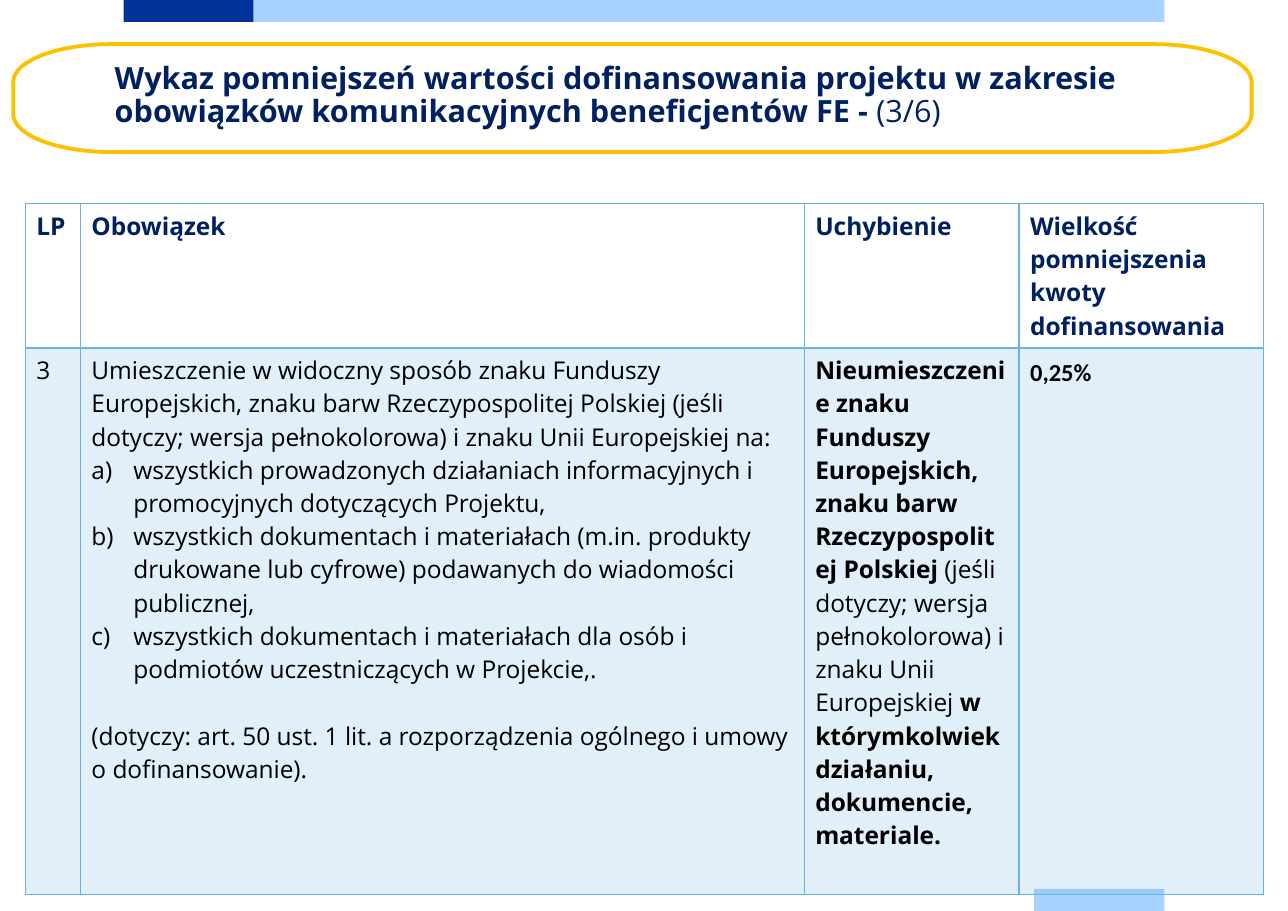
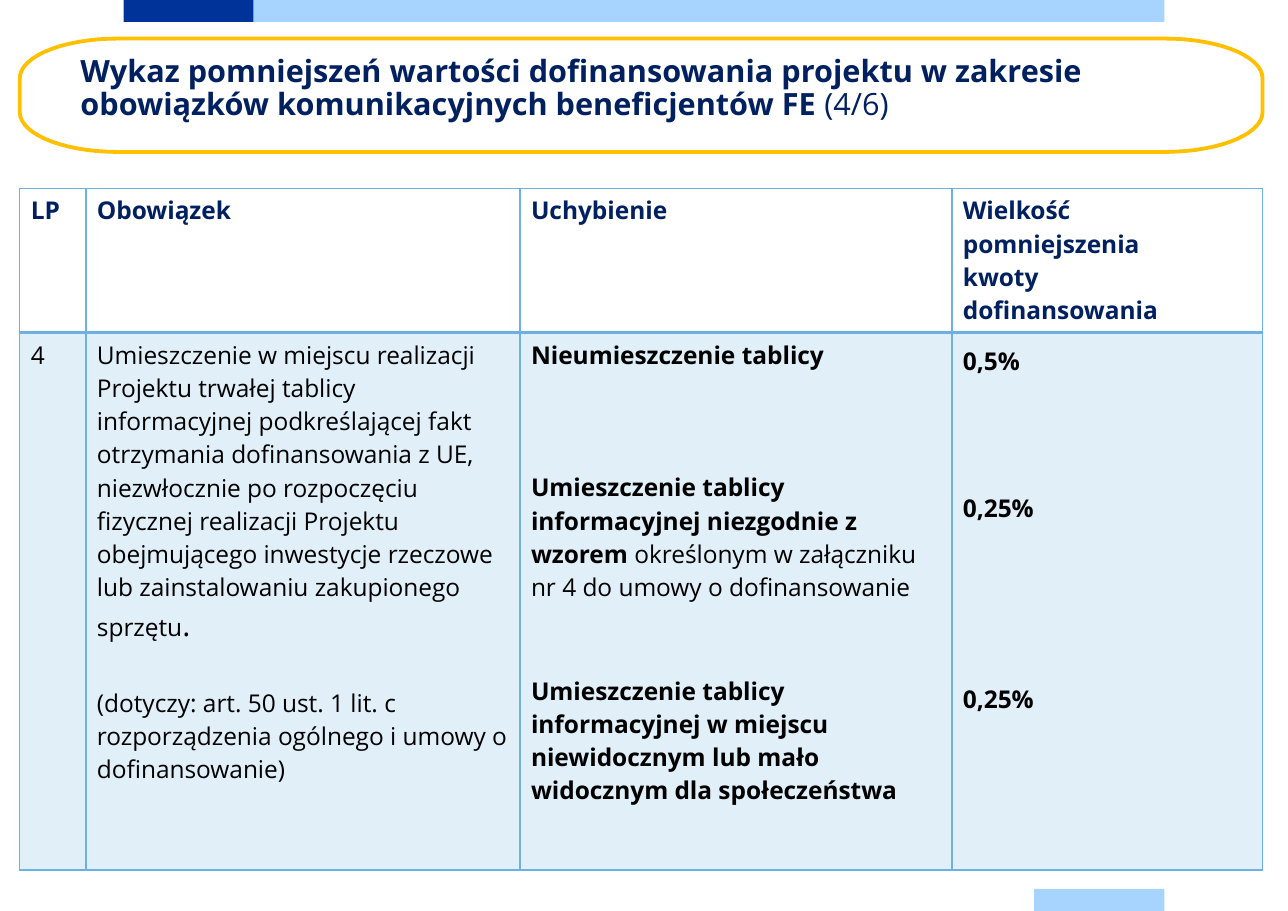
from math import cos, radians, sin

from pptx import Presentation
from pptx.dml.color import RGBColor
from pptx.enum.shapes import MSO_SHAPE as Preset
from pptx.enum.text import MSO_ANCHOR as Anchor, MSO_AUTO_SIZE as AutoSize, PP_ALIGN as Align
from pptx.oxml.ns import qn
from pptx.util import Inches, Pt
from lxml.etree import SubElement, Element

COLOURS = {"navy": "002060", "black": "000000", "blue": "003399",
           "sky": "A6D3FF", "table": "6BB1E2", "frame": "FFC000"}


def rgb(name):
    return RGBColor.from_string(COLOURS[name])


def write(paragraph, text, size=16, bold=False, colour="black", face="Open Sans",
          before=None, lettered=False):
    if lettered:
        props = paragraph._p.get_or_add_pPr()
        props.set("marL", str(Inches(0.38)))
        props.set("indent", str(-Inches(0.38)))
        SubElement(props, qn("a:buAutoNum"), type="alphaLcParenR")
    if before:
        paragraph.space_before = Pt(before)
    run = paragraph.add_run()
    run.text = text
    run.font.size, run.font.bold, run.font.name = Pt(size), bold, face
    run.font.color.rgb = rgb(colour)


BOLD = {"bold": True}
LETTERED = {"lettered": True}
HEADING = {"bold": True, "colour": "navy"}
HEADER = [[[(line, HEADING)] for line in lines] for lines in (
    ["LP"], ["Obowiązek"], ["Uchybienie"],
    ["Wielkość", "pomniejszenia", "kwoty", "dofinansowania"])]
TITLE = ("Wykaz pomniejszeń wartości dofinansowania projektu w zakresie "
         "obowiązków komunikacyjnych beneficjentów FE ")

PAGES = [
    {
        "title": [TITLE + "- ", "(3/6)"],
        "title_at": (8.9, 6.89, 86.91, 8.71),
        "frame_at": (1.03, 4.84, 96.15, 11.85),
        "table_at": (1.97, 22.37, 96.15),
        "columns": (4.45, 58.45, 17.35, 19.75),
        "rows": (15.84, 60),
        "rule": 1,
        "drop": 0.09,
        "cells": [
            [[("3", {})]],
            [
                [("Umieszczenie w widoczny sposób znaku Funduszy Europejskich, znaku barw "
                  "Rzeczypospolitej Polskiej (jeśli dotyczy; wersja pełnokolorowa) i znaku "
                  "Unii Europejskiej na:", {})],
                [("wszystkich prowadzonych działaniach informacyjnych i promocyjnych "
                  "dotyczących Projektu,", LETTERED)],
                [("wszystkich dokumentach i materiałach (m.in. produkty drukowane lub "
                  "cyfrowe) podawanych do wiadomości publicznej,", LETTERED)],
                [("wszystkich dokumentach i materiałach dla osób i podmiotów "
                  "uczestniczących w Projekcie,.", LETTERED)],
                [("(dotyczy: art. 50 ust. 1 lit. a rozporządzenia ogólnego i umowy o "
                  "dofinansowanie).", {"before": 22})],
            ],
            [[("Nieumieszczenie znaku Funduszy Europejskich, znaku barw "
               "Rzeczypospolitej Polskiej ", BOLD),
              ("(jeśli dotyczy; wersja pełnokolorowa) i znaku Unii Europejskiej ", {}),
              ("w którymkolwiek działaniu, dokumencie, materiale.", BOLD)]],
            [[("0,25%", {"bold": True, "face": "Calibri"})]],
        ],
    },
    {
        "title": [TITLE, "(4/6)"],
        "title_at": (6.24, 6.17, 90.42, 11.73),
        "frame_at": (1.54, 4.23, 96.49, 12.45),
        "table_at": (1.54, 20.68, 96.49),
        "columns": (5.32, 34.93, 34.75, 25),
        "rows": (15.84, 59),
        "rule": 2,
        "drop": 0.11,
        "cells": [
            [[("4", {})]],
            [
                [("Umieszczenie w miejscu realizacji Projektu trwałej tablicy informacyjnej "
                  "podkreślającej fakt otrzymania dofinansowania z UE, niezwłocznie po "
                  "rozpoczęciu fizycznej realizacji Projektu obejmującego inwestycje rzeczowe "
                  "lub zainstalowaniu zakupionego sprzętu", {}), (".", {"size": 19.8})],
                [("(dotyczy: art. 50 ust. 1 lit. c rozporządzenia ogólnego i umowy o "
                  "dofinansowanie)", {"before": 27})],
            ],
            [
                [("Nieumieszczenie tablicy", BOLD)],
                [("Umieszczenie tablicy informacyjnej niezgodnie z wzorem",
                  {"bold": True, "before": 65}),
                 (" określonym w załączniku nr 4 do umowy o dofinansowanie", {})],
                [("Umieszczenie tablicy informacyjnej w miejscu niewidocznym lub mało "
                  "widocznym dla społeczeństwa", {"bold": True, "before": 46})],
            ],
            [
                [("0,5%", BOLD)],
                [("0,25%", {"bold": True, "before": 74})],
                [("0,25%", {"bold": True, "before": 103})],
            ],
        ],
    },
]

prs = Presentation()
prs.slide_width, prs.slide_height = Inches(11.69), Inches(8.27)
col, row = prs.slide_width / 100, prs.slide_height / 100
title_only = prs.slide_layouts[5]
slides = [prs.slides.add_slide(title_only) for page in PAGES]

MARGIN, BLOCK, BAND = 9.6, 10.1, 2.42
for number, (first, span, top, colour) in enumerate([
        (0, 1, 0, "blue"), (1, 7, 0, "sky"), (7, 1, 100 - BAND, "sky")]):
    band = slides[0].shapes.add_shape(
        Preset.RECTANGLE, int((MARGIN + first * BLOCK) * col), int(top * row),
        int(span * BLOCK * col), int(BAND * row))
    band.shadow.inherit = False
    band.fill.solid()
    band.fill.fore_color.rgb = rgb(colour)
    band.line.fill.background()
    band.element.nvSpPr.cNvPr.id = 20 + number
    prs.slide_master.shapes.element.append(band.element)

for slide, page in zip(slides, PAGES):
    title = slide.shapes.title
    left, top, width, height = page["title_at"]
    title.left, title.top = int(left * col), int(top * row)
    title.width, title.height = int(width * col), int(height * row)
    heading = title.text_frame
    heading.margin_left = heading.margin_right = heading.margin_top = heading.margin_bottom = 0
    heading.word_wrap, heading.auto_size = True, AutoSize.NONE
    heading.vertical_anchor = Anchor.TOP
    heading.paragraphs[0].alignment = Align.LEFT
    heading.paragraphs[0].line_spacing = 0.9
    for text, bold in zip(page["title"], (True, False)):
        write(heading.paragraphs[0], text, size=20, bold=bold, colour="navy")

    left, top, width = page["table_at"]
    table = slide.shapes.add_table(
        2, 4, int(left * col), int(top * row), int(width * col),
        int(sum(page["rows"]) * row)).table
    table.first_row = table.horz_banding = False
    for column, share in zip(table.columns, page["columns"]):
        column.width = int(share / 100 * width * col)
    for line, share in zip(table.rows, page["rows"]):
        line.height = int(share * row)

    for r, contents in enumerate([HEADER, page["cells"]]):
        for c, paragraphs in enumerate(contents):
            cell = table.cell(r, c)
            for i, runs in enumerate(paragraphs):
                frame = cell.text_frame
                paragraph = frame.add_paragraph() if i else frame.paragraphs[0]
                for text, style in runs:
                    write(paragraph, text, **style)
            props = cell._tc.get_or_add_tcPr()
            if r:
                cell.fill.solid()
                cell.fill.fore_color.rgb = rgb("table")
                SubElement(next(props.iter(qn("a:srgbClr"))), qn("a:alpha"), val="20000")
            else:
                cell.fill.background()
            for place, side in enumerate("LRTB"):
                inner = (r, side) in ((0, "B"), (1, "T"))
                border = Element(qn("a:ln" + side), w=str(Pt(page["rule"] if inner else 1)))
                SubElement(SubElement(border, qn("a:solidFill")), qn("a:srgbClr"),
                           val=COLOURS["table"])
                props.insert(place, border)
    table.cell(1, 3).margin_top = Inches(page["drop"])

    left, top, width, height = page["frame_at"]
    bend_x, bend_y = 7.6, 0.35 * height
    corners = [(left + width - bend_x, top + height - bend_y), (left + bend_x, top + height - bend_y),
               (left + bend_x, top + bend_y), (left + width - bend_x, top + bend_y)]
    outline = [(int((x + bend_x * cos(radians(90 * quarter + angle))) * col),
                int((y + bend_y * sin(radians(90 * quarter + angle))) * row))
               for quarter, (x, y) in enumerate(corners) for angle in range(0, 91, 6)]
    builder = slide.shapes.build_freeform(*outline[0])
    builder.add_line_segments(outline[1:], close=True)
    frame = builder.convert_to_shape()
    frame.shadow.inherit = False
    frame.fill.background()
    frame.line.color.rgb = rgb("frame")
    frame.line.width = Pt(2.5)

prs.save("out.pptx")
